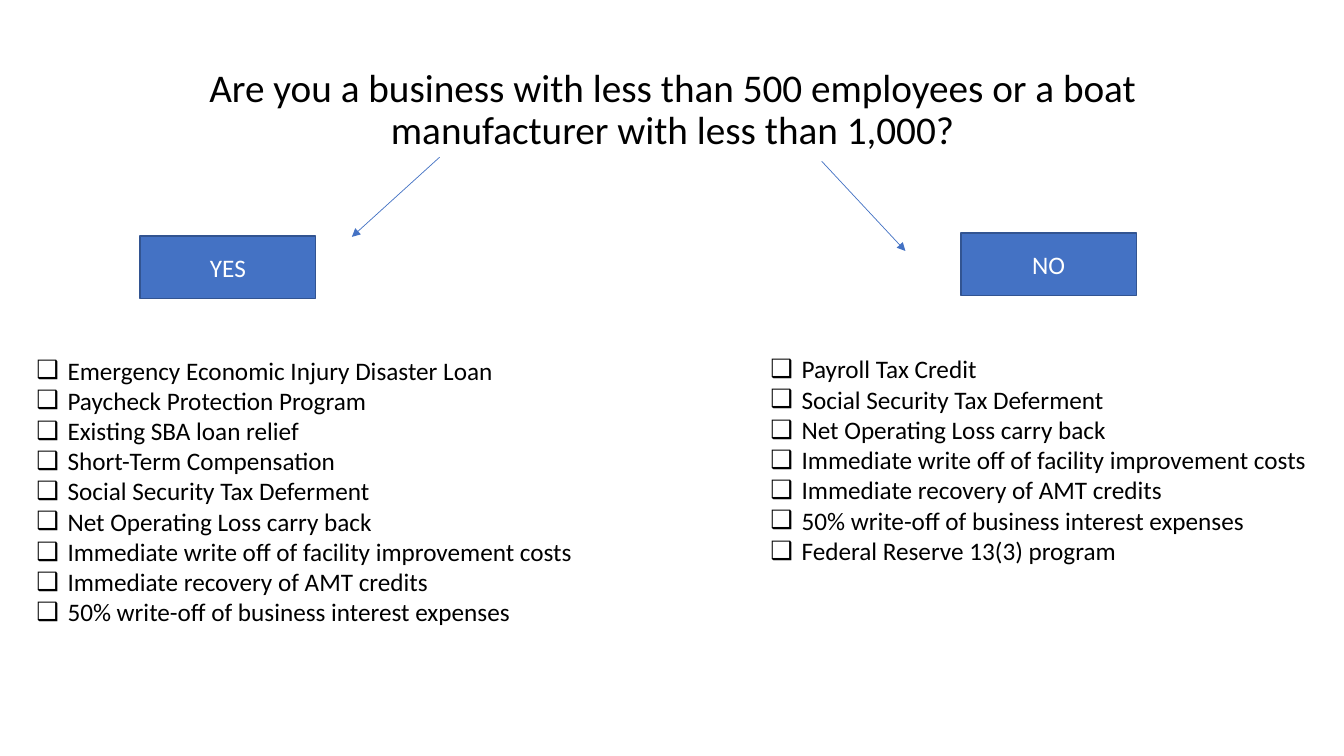
from lxml.etree import SubElement
from pptx import Presentation
from pptx.dml.color import RGBColor
from pptx.enum.shapes import MSO_CONNECTOR, MSO_SHAPE
from pptx.enum.text import MSO_ANCHOR, MSO_AUTO_SIZE, PP_ALIGN
from pptx.oxml.ns import qn
from pptx.util import Inches, Pt

FONT = "Calibri"
BLUE, DARK_BLUE, BLACK, WHITE = "4472C4", "325491", "000000", "FFFFFF"
INDENT = Inches(0.31)

QUESTION = ("Are you a business with less than 500 employees or a boat "
            "manufacturer with less than 1,000?")
SHARED_RELIEF = [
    "Social Security Tax Deferment",
    "Net Operating Loss carry back",
    "Immediate write off of facility improvement costs",
    "Immediate recovery of AMT credits",
    "50% write-off of business interest expenses",
]
YES_PROGRAMS = [
    "Emergency Economic Injury Disaster Loan",
    "Paycheck Protection Program",
    "Existing SBA loan relief",
    "Short-Term Compensation",
] + SHARED_RELIEF
NO_PROGRAMS = ["Payroll Tax Credit"] + SHARED_RELIEF + ["Federal Reserve 13(3) program"]


def color(hex_string):
    return RGBColor.from_string(hex_string)


def place(shape, box):
    shape.left, shape.top, shape.width, shape.height = map(Inches, box)


def style_paragraph(paragraph, size, hex_string, alignment):
    paragraph.alignment = alignment
    paragraph.space_before = Pt(0)
    paragraph.font.name = FONT
    paragraph.font.size = Pt(size)
    paragraph.font.color.rgb = color(hex_string)


def prepare_frame(shape, anchor):
    frame = shape.text_frame
    frame.word_wrap = True
    frame.auto_size = MSO_AUTO_SIZE.NONE
    frame.vertical_anchor = anchor
    return frame


def add_question(title, box):
    place(title, box)
    frame = prepare_frame(title, MSO_ANCHOR.TOP)
    frame.text = QUESTION
    style_paragraph(frame.paragraphs[0], 28, BLACK, PP_ALIGN.CENTER)
    frame.paragraphs[0].line_spacing = 0.9


def add_checklist(body, box, programs):
    place(body, box)
    frame = prepare_frame(body, MSO_ANCHOR.TOP)
    frame.text = "\n".join(programs)
    for paragraph in frame.paragraphs:
        # Hanging checkbox bullet
        properties = paragraph._p.get_or_add_pPr()
        properties.set("marL", str(INDENT))
        properties.set("indent", str(-INDENT))
        SubElement(properties, qn("a:buChar")).set("char", "❑")
        style_paragraph(paragraph, 18, BLACK, PP_ALIGN.LEFT)


def add_answer(slide, box, label):
    shape = slide.shapes.add_shape(MSO_SHAPE.FLOWCHART_PROCESS, *map(Inches, box))
    shape.shadow.inherit = False
    shape.fill.solid()
    shape.fill.fore_color.rgb = color(BLUE)
    shape.line.color.rgb = color(DARK_BLUE)
    shape.line.width = Pt(1)
    frame = prepare_frame(shape, MSO_ANCHOR.MIDDLE)
    frame.text = label
    style_paragraph(frame.paragraphs[0], 18, WHITE, PP_ALIGN.CENTER)


def add_arrow(slide, start, end):
    arrow = slide.shapes.add_connector(
        MSO_CONNECTOR.STRAIGHT, *map(Inches, start + end))
    arrow.line.color.rgb = color(BLUE)
    arrow.line.width = Pt(0.5)
    SubElement(arrow.line._get_or_add_ln(), qn("a:tailEnd")).set("type", "triangle")
    SubElement(arrow._element.spPr, qn("a:effectLst"))


def build_decision_slide(presentation):
    # Two Content layout: a title and two lists
    slide = presentation.slides.add_slide(presentation.slide_layouts[3])
    title, yes_list, no_list = list(slide.placeholders)[:3]

    # Question
    add_question(title, (0.92, 0.63, 11.5, 4.76))

    # Relief programs for each answer
    add_checklist(yes_list, (0.26, 3.47, 5.73, 3.13), YES_PROGRAMS)
    add_checklist(no_list, (7.54, 3.46, 5.73, 2.22), NO_PROGRAMS)

    # Answers
    add_answer(slide, (9.53, 2.31, 1.74, 0.62), "NO")
    add_answer(slide, (1.39, 2.34, 1.74, 0.62), "YES")

    # Arrows from the question towards the answers
    add_arrow(slide, (4.36, 1.56), (3.49, 2.35))
    add_arrow(slide, (8.15, 1.6), (8.98, 2.49))


def main():
    presentation = Presentation()
    presentation.slide_width = Inches(13.33)
    presentation.slide_height = Inches(7.5)
    build_decision_slide(presentation)
    presentation.save("out.pptx")


if __name__ == "__main__":
    main()
